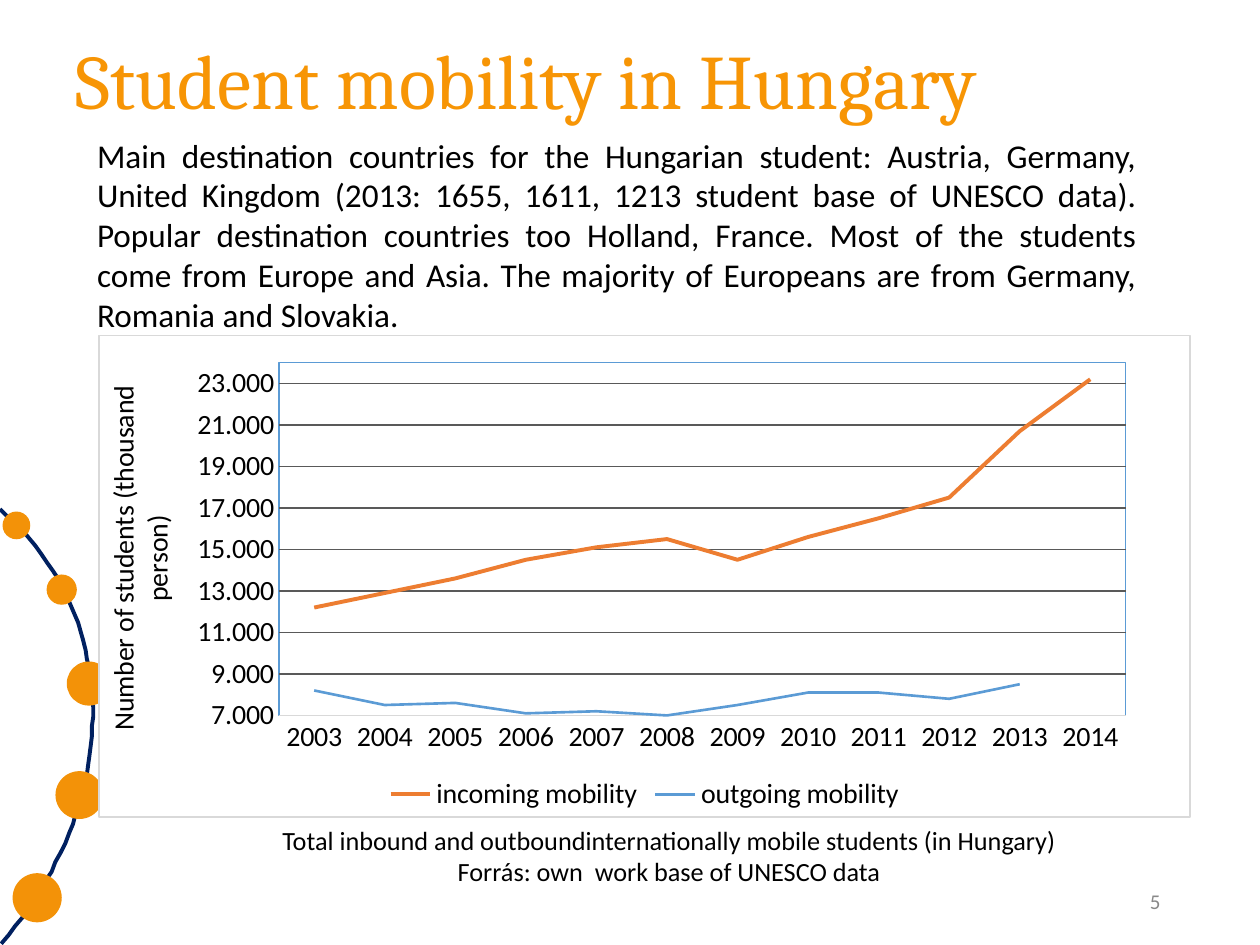
from dataclasses import dataclass
from typing import Any

from lxml import etree
from pptx import Presentation
from pptx import util as u
from pptx.chart import data as cd
from pptx.dml import color as co
from pptx.enum import chart as ch, shapes as sh, text as tx
from pptx.oxml import parse_xml
from pptx.oxml import ns

PX = 9144
NS = ns.nsdecls("a", "c")


@dataclass(frozen=True)
class Theme:
    title: str = "F79505"
    text: str = "000000"
    muted: str = "898989"
    paper: str = "FFFFFF"
    dot: str = "F39208"
    arc: str = "002060"
    frame: str = "D9D9D9"
    grid: str = "595959"
    incoming: str = "ED7D31"
    outgoing: str = "5B9BD5"
    heading_font: str = "Cambria"
    body_font: str = "Calibri"
    title_size: int = 44
    body_size: int = 19
    chart_size: int = 16
    caption_size: int = 15
    number_size: int = 12


@dataclass(frozen=True)
class Box:
    left: int
    top: int
    width: int
    height: int

    def emu(self) -> list[int]:
        return [v * PX for v in (self.left, self.top, self.width, self.height)]


@dataclass(frozen=True)
class Dot:
    left: int
    top: int
    size: int


@dataclass(frozen=True)
class Series:
    name: str
    values: list
    color: str
    width: float


T = Theme()
DOTS = [Dot(2, 406, 22), Dot(37, 456, 24), Dot(53, 525, 35),
        Dot(44, 612, 38), Dot(10, 693, 39)]
ARC = [(0, 404), (101, 492), (95, 640), (1, 749)]
YEARS = [str(y) for y in range(2003, 2015)]
SERIES = [
    Series("incoming mobility", [12.2, 12.9, 13.6, 14.5, 15.1, 15.5, 14.5,
                                 15.6, 16.5, 17.5, 20.7, 23.2], T.incoming, 2.25),
    Series("outgoing mobility", [8.2, 7.5, 7.6, 7.1, 7.2, 7, 7.5,
                                 8.1, 8.1, 7.8, 8.5, None], T.outgoing, 1.5),
]
BODY = ("Main destination countries for the Hungarian student: Austria, Germany, "
        "United Kingdom (2013: 1655, 1611, 1213 student base of UNESCO data). "
        "Popular destination countries too Holland, France. Most of the students "
        "come from Europe and Asia. The majority of Europeans are from Germany, "
        "Romania and Slovakia.")
CAPTION = ["Total inbound and outboundinternationally mobile students (in Hungary)",
           "Forrás: own  work base of UNESCO data"]


def rgb(value: str) -> co.RGBColor:
    return co.RGBColor.from_string(value)


def apply(obj: Any, values: dict) -> None:
    for name, value in values.items():
        setattr(obj, name, value)


def style_font(font: Any, size: int, color: str, name: str = T.body_font) -> None:
    apply(font, {"name": name, "size": u.Pt(size), "bold": False})
    font.color.rgb = rgb(color)


def style_line(line: Any, color: str, width: float) -> None:
    line.color.rgb = rgb(color)
    line.width = u.Pt(width)


def place(sp: Any, box: Box) -> None:
    apply(sp, dict(zip(("left", "top", "width", "height"), box.emu())))


def write(sp: Any, lines: list[str], size: int, color: str, align: Any,
          anchor: Any = tx.MSO_ANCHOR.TOP, font: str = T.body_font,
          spacing: float = 1.0) -> None:
    tf = sp.text_frame
    apply(tf, {"word_wrap": True, "auto_size": tx.MSO_AUTO_SIZE.NONE,
               "vertical_anchor": anchor})
    for i, line in enumerate(lines):
        p = tf.paragraphs[0] if i == 0 else tf.add_paragraph()
        apply(p, {"alignment": align, "line_spacing": spacing, "space_before": u.Pt(0)})
        r = p.add_run()
        r.text = line
        style_font(r.font, size, color, font)


def remove_bullet(p: Any) -> None:
    ppr = p._p.get_or_add_pPr()
    ppr.set("marL", "0")
    ppr.set("indent", "0")
    etree.SubElement(ppr, ns.qn("a:buNone"))


def bezier(t: float) -> tuple[float, float]:
    weights = ((1 - t) ** 3, 3 * t * (1 - t) ** 2, 3 * t * t * (1 - t), t ** 3)
    x, y = (sum(w * pt[k] for w, pt in zip(weights, ARC)) for k in (0, 1))
    return x, y


def add_arc(s: Any, steps: int = 48) -> None:
    start, *rest = [bezier(i / steps) for i in range(steps + 1)]
    fb = s.shapes.build_freeform(*start, scale=PX)
    fb.add_line_segments(rest, close=False)
    sp = fb.convert_to_shape()
    sp.shadow.inherit = False
    sp.fill.background()
    style_line(sp.line, T.arc, 2.25)


def add_dot(s: Any, dot: Dot) -> None:
    sp = s.shapes.add_shape(sh.MSO_SHAPE.OVAL,
                            *Box(dot.left, dot.top, dot.size, dot.size).emu())
    sp.shadow.inherit = False
    sp.fill.solid()
    sp.fill.fore_color.rgb = rgb(T.dot)
    sp.line.fill.background()


def outline(color: str, fill: str) -> Any:
    return parse_xml(f'<c:spPr {NS}>{fill}<a:ln w="9525"><a:solidFill>'
                     f'<a:srgbClr val="{color}"/></a:solidFill></a:ln></c:spPr>')


def frame_chart(chart: Any) -> None:
    plot = chart.element.find(".//" + ns.qn("c:plotArea"))
    for old in plot.findall(ns.qn("c:layout")):
        plot.remove(old)
    modes = "".join(f'<c:{k}Mode val="edge"/>' for k in "xy")
    sizes = "".join(f'<c:{k} val="{v}"/>' for k, v in
                    zip("xywh", (0.165, 0.056, 0.776, 0.733)))
    plot.insert(0, parse_xml(f'<c:layout {NS}><c:manualLayout><c:layoutTarget val="inner"/>'
                             f'{modes}{sizes}</c:manualLayout></c:layout>'))
    plot.append(outline(T.outgoing, "<a:noFill/>"))
    paper = f'<a:solidFill><a:srgbClr val="{T.paper}"/></a:solidFill>'
    chart.element.find(ns.qn("c:chart")).addnext(outline(T.frame, paper))


def add_mobility_chart(s: Any, box: Box) -> None:
    data = cd.CategoryChartData()
    data.categories = YEARS
    for item in SERIES:
        data.add_series(item.name, item.values)
    chart = s.shapes.add_chart(ch.XL_CHART_TYPE.LINE, *box.emu(), data).chart
    apply(chart, {"has_title": False, "has_legend": True})
    style_font(chart.font, T.chart_size, T.text)
    apply(chart.legend, {"position": ch.XL_LEGEND_POSITION.BOTTOM,
                         "include_in_layout": False})
    chart.plots[0].vary_by_categories = False
    for ser, item in zip(chart.plots[0].series, SERIES):
        ser.smooth = False
        ser.marker.style = ch.XL_MARKER_STYLE.NONE
        style_line(ser.format.line, item.color, item.width)
    cat, val = chart.category_axis, chart.value_axis
    cat.major_tick_mark = ch.XL_TICK_MARK.NONE
    style_line(cat.format.line, T.frame, 0.75)
    apply(val, {"minimum_scale": 7, "maximum_scale": 24, "major_unit": 2,
                "major_tick_mark": ch.XL_TICK_MARK.NONE, "has_major_gridlines": True})
    apply(val.tick_labels, {"number_format": ".000", "number_format_is_linked": False})
    val.format.line.fill.background()
    style_line(val.major_gridlines.format.line, T.grid, 0.75)
    r = val.axis_title.text_frame.paragraphs[0].add_run()
    r.text = "Number of students (thousand person)"
    style_font(r.font, T.chart_size, T.text)
    frame_chart(chart)


def main() -> None:
    prs = Presentation()
    prs.slide_width, prs.slide_height = 1000 * PX, 750 * PX
    s = prs.slides.add_slide(prs.slide_layouts[1])
    add_arc(s)
    for dot in DOTS:
        add_dot(s, dot)
    title, body = s.shapes.title, s.placeholders[1]
    place(title, Box(50, 5, 900, 125))
    write(title, ["Student mobility in Hungary"], T.title_size, T.title,
          tx.PP_ALIGN.LEFT, tx.MSO_ANCHOR.MIDDLE, T.heading_font, 0.9)
    place(body, Box(67, 102, 845, 246))
    remove_bullet(body.text_frame.paragraphs[0])
    write(body, [BODY], T.body_size, T.text, tx.PP_ALIGN.JUSTIFY)
    number = s.shapes.add_textbox(*Box(706, 695, 225, 40).emu())
    write(number, ["5"], T.number_size, T.muted, tx.PP_ALIGN.RIGHT, tx.MSO_ANCHOR.MIDDLE)
    caption = s.shapes.add_textbox(*Box(117, 649, 828, 86).emu())
    write(caption, CAPTION, T.caption_size, T.text, tx.PP_ALIGN.CENTER)
    add_mobility_chart(s, Box(78, 266, 867, 383))
    prs.save("out.pptx")


if __name__ == "__main__":
    main()
